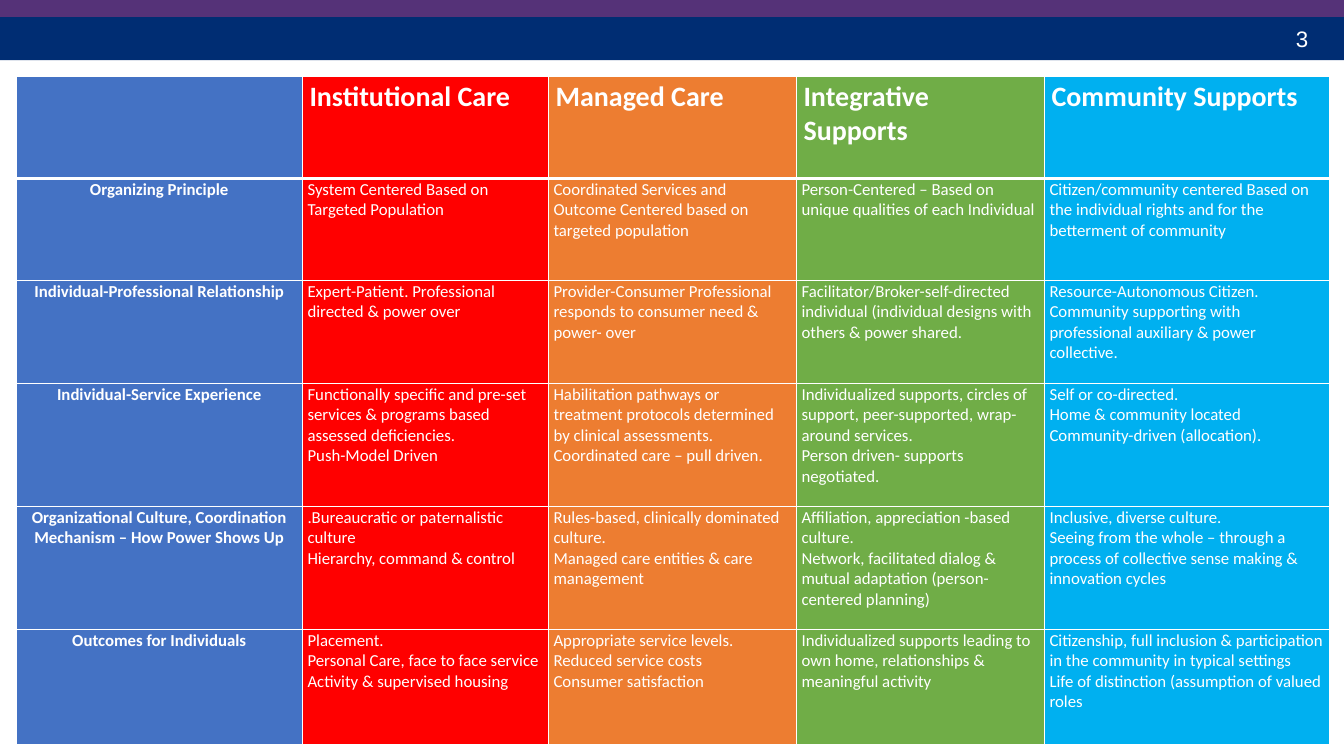
from lxml.etree import SubElement
from pptx import Presentation
from pptx.dml.color import RGBColor
from pptx.enum.shapes import MSO_SHAPE as Shape
from pptx.enum.text import PP_ALIGN as Align
from pptx.oxml.ns import qn
from pptx.util import Cm, Pt

WHITE = RGBColor(0xFF, 0xFF, 0xFF)
NAVY = RGBColor(0x00, 0x2D, 0x73)
PURPLE = RGBColor(0x55, 0x32, 0x78)
BLUE = RGBColor(0x44, 0x72, 0xC4)
RED = RGBColor(0xFF, 0x00, 0x00)
ORANGE = RGBColor(0xED, 0x7D, 0x31)
GREEN = RGBColor(0x70, 0xAD, 0x47)
SKY = RGBColor(0x00, 0xB0, 0xF0)

COLUMN_COLORS = [BLUE, RED, ORANGE, GREEN, SKY]
COLUMN_WIDTHS = [7.21, 6.2, 6.25, 6.25, 7.19]
ROW_HEIGHTS = [2.57, 2.57, 2.59, 3.1, 3.1, 2.9]
ROWS = [
    ["", "Institutional Care", "Managed Care", "Integrative Supports",
     "Community Supports"],
    ["Organizing Principle",
     "System Centered Based on Targeted Population",
     "Coordinated Services and Outcome Centered based on targeted population",
     "Person-Centered – Based on unique qualities of each Individual",
     "Citizen/community centered Based on the individual rights and for the "
     "betterment of community"],
    ["Individual-Professional Relationship",
     "Expert-Patient. Professional directed & power over",
     "Provider-Consumer Professional responds to consumer need & power- over",
     "Facilitator/Broker-self-directed individual (individual designs with "
     "others & power shared.",
     "Resource-Autonomous Citizen. Community supporting with professional "
     "auxiliary & power collective."],
    ["Individual-Service Experience",
     "Functionally specific and pre-set services & programs based assessed "
     "deficiencies.\nPush-Model Driven",
     "Habilitation pathways or treatment protocols determined by clinical "
     "assessments.\nCoordinated care – pull driven.",
     "Individualized supports, circles of support, peer-supported, wrap-around "
     "services.\nPerson driven- supports negotiated.",
     "Self or co-directed.\nHome & community located\n"
     "Community-driven (allocation)."],
    ["Organizational Culture, Coordination Mechanism – How Power Shows Up",
     ".Bureaucratic or paternalistic culture\nHierarchy, command & control",
     "Rules-based, clinically dominated culture.\n"
     "Managed care entities & care management",
     "Affiliation, appreciation -based culture.\nNetwork, facilitated dialog & "
     "mutual adaptation (person-centered planning)",
     "Inclusive, diverse culture.\nSeeing from the whole – through a process of "
     "collective sense making & innovation cycles"],
    ["Outcomes for Individuals",
     "Placement.\nPersonal Care, face to face service\n"
     "Activity & supervised housing",
     "Appropriate service levels.\nReduced service costs\nConsumer satisfaction",
     "Individualized supports leading to own home, relationships & meaningful "
     "activity",
     "Citizenship, full inclusion & participation in the community in typical "
     "settings\nLife of distinction (assumption of valued roles"],
]


def format_text(text_frame, font_name, size, bold, align):
    """Apply one white text style to every paragraph."""
    for paragraph in text_frame.paragraphs:
        paragraph.alignment = align
        for run in paragraph.runs:
            run.font.name = font_name
            run.font.size = Pt(size)
            run.font.bold = bold
            run.font.color.rgb = WHITE


def add_band(slide, top, height, color):
    """Add a full-width header band."""
    shape = slide.shapes.add_shape(Shape.RECTANGLE, 0, Cm(top), Cm(33.87), Cm(height))
    shape.shadow.inherit = False
    shape.fill.solid()
    shape.fill.fore_color.rgb = color
    shape.line.fill.background()


def add_slide_number(slide, number):
    """Add the right-aligned slide number in the header."""
    box = slide.shapes.add_textbox(Cm(23.95), Cm(0.51), Cm(9.27), Cm(0.94))
    box.text_frame.word_wrap = True
    box.text_frame.text = number
    format_text(box.text_frame, "Arial", 16, False, Align.RIGHT)


def set_borders(cell, top, bottom):
    """Draw white cell borders with the given top and bottom widths."""
    properties = cell._tc.get_or_add_tcPr()
    for side, width in (("L", 1), ("R", 1), ("T", top), ("B", bottom)):
        line = SubElement(properties, qn(f"a:ln{side}"), w=str(Pt(width)))
        fill = SubElement(line, qn("a:solidFill"))
        SubElement(fill, qn("a:srgbClr"), val=str(WHITE))


def fill_cell(cell, text, row, column):
    """Set the text, margins, borders and fill of one table cell."""
    header = row == 0
    cell.margin_left = cell.margin_right = Cm(0.18 if header else 0.13)
    cell.margin_top = Cm(0.08 if header else 0.02)
    cell.margin_bottom = Cm(0.08 if header else 0)
    set_borders(cell, 3 if row == 1 else 1, 3 if header else 1)
    cell.fill.solid()
    cell.fill.fore_color.rgb = COLUMN_COLORS[column]
    cell.text_frame.text = text
    align = Align.CENTER if column == 0 else Align.LEFT
    format_text(cell.text_frame, "Calibri", 20 if header else 12,
                header or column == 0, align)


def add_comparison_table(slide):
    """Add the table that compares the four kinds of support."""
    frame = slide.shapes.add_table(
        len(ROWS), len(COLUMN_WIDTHS), Cm(0.41), Cm(1.93),
        Cm(sum(COLUMN_WIDTHS)), Cm(sum(ROW_HEIGHTS)))
    table = frame.table
    for column, width in zip(table.columns, COLUMN_WIDTHS):
        column.width = Cm(width)
    for row, height in zip(table.rows, ROW_HEIGHTS):
        row.height = Cm(height)
    for row, texts in enumerate(ROWS):
        for column, text in enumerate(texts):
            fill_cell(table.cell(row, column), text, row, column)


def main():
    """Build the slide and save it."""
    presentation = Presentation()
    presentation.slide_width = Cm(33.87)
    presentation.slide_height = Cm(19.05)
    slide = presentation.slides.add_slide(presentation.slide_layouts[6])
    add_band(slide, 0.43, 1.09, NAVY)
    add_band(slide, 0, 0.43, PURPLE)
    add_slide_number(slide, "3")
    add_comparison_table(slide)
    presentation.save("out.pptx")


if __name__ == "__main__":
    main()
